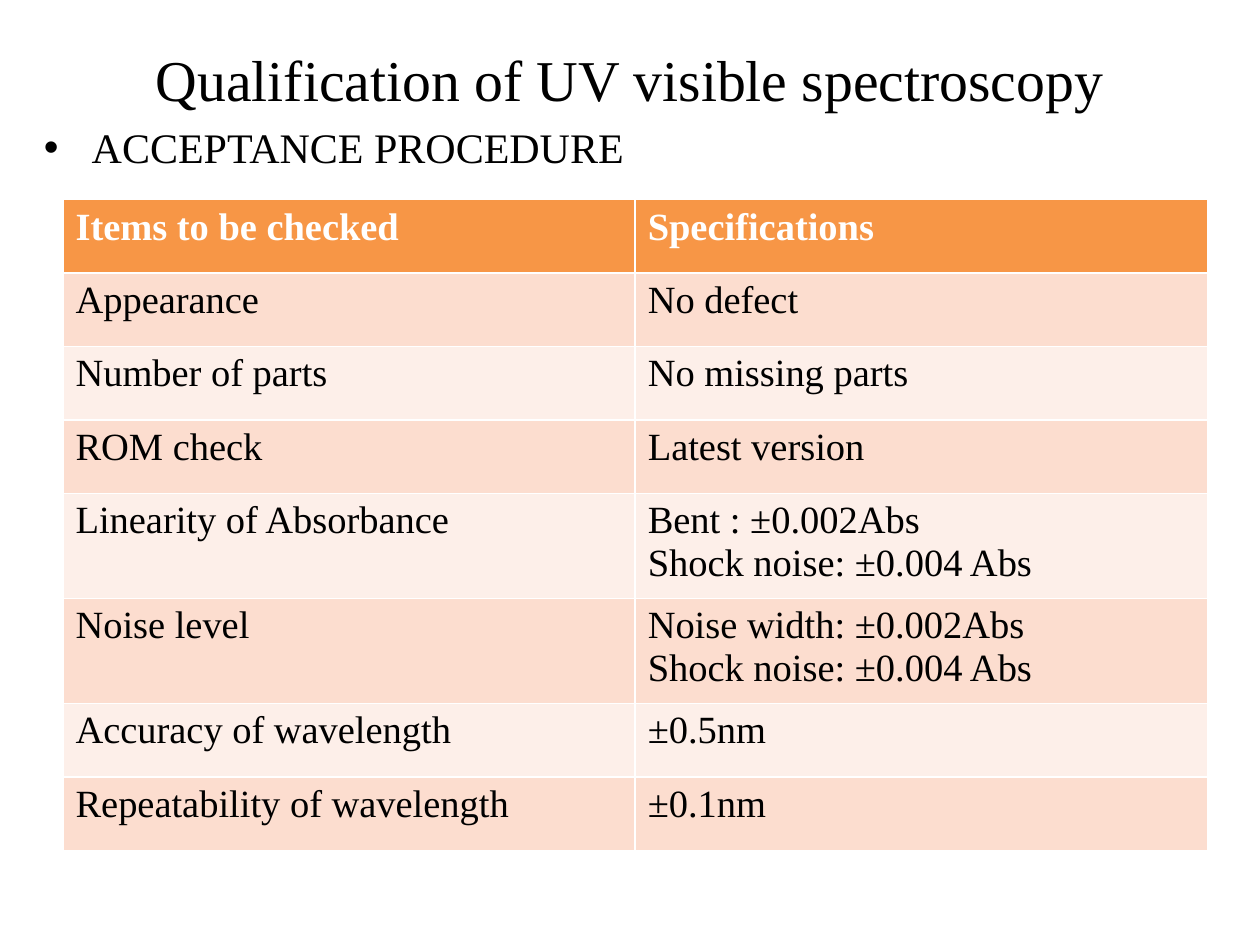
from dataclasses import dataclass

from lxml import etree
from pptx import Presentation
from pptx.dml.color import RGBColor
from pptx.enum.text import MSO_ANCHOR, PP_ALIGN
from pptx.oxml.ns import qn
from pptx.util import Inches, Pt

CENTER, LEFT = PP_ALIGN.CENTER, PP_ALIGN.LEFT
MIDDLE, TOP = MSO_ANCHOR.MIDDLE, MSO_ANCHOR.TOP


@dataclass(frozen=True)
class Theme:
    font: str = "Times New Roman"
    ink: str = "000000"
    header_ink: str = "FFFFFF"
    header_fill: str = "F79646"
    bands: tuple = ("FCDDCF", "FDEFE9")
    title_size: int = 33
    body_size: int = 24
    table_size: int = 22


theme = Theme()

# The page is a grid of 120 columns by 90 rows
UNIT = Inches(10) // 120
ROW_HEIGHT = 7 * UNIT
TABLE_WIDTH = 109 * UNIT


def style(para, size, color=theme.ink, bold=False):
    para.font.name = theme.font
    para.font.size = Pt(size)
    para.font.bold = bold
    para.font.color.rgb = RGBColor.from_string(color)


def add_text(page, grid, text, size, align, anchor):
    box = page.shapes.add_textbox(*(n * UNIT for n in grid))
    frame = box.text_frame
    frame.word_wrap = True
    frame.vertical_anchor = anchor
    para = frame.paragraphs[0]
    para.text = text
    para.alignment = align
    style(para, size)
    return para


deck = Presentation()
deck.slide_width = 120 * UNIT
deck.slide_height = 90 * UNIT
page = deck.slides.add_slide(deck.slide_layouts[6])

# Title
add_text(page, (6, 3, 108, 9), "Qualification of UV visible spectroscopy",
         theme.title_size, CENTER, MIDDLE)

# Bulleted heading with a hanging indent
heading = add_text(page, (3, 11, 113, 74), "ACCEPTANCE PROCEDURE",
                   theme.body_size, LEFT, TOP)
heading.space_before = Pt(0.2 * theme.body_size)
properties = heading._p.get_or_add_pPr()
properties.set("marL", str(Inches(0.38)))
properties.set("indent", str(-Inches(0.38)))
etree.SubElement(properties, qn("a:buFont")).set("typeface", "Arial")
etree.SubElement(properties, qn("a:buChar")).set("char", "•")

# Acceptance table; its default style draws the white rules
rows = [
    ("Items to be checked", "Specifications"),
    ("Appearance", "No defect"),
    ("Number of parts", "No missing parts"),
    ("ROM check", "Latest version"),
    ("Linearity of Absorbance", "Bent : ±0.002Abs\nShock noise: ±0.004 Abs"),
    ("Noise level", "Noise width: ±0.002Abs\nShock noise: ±0.004 Abs"),
    ("Accuracy of wavelength", "±0.5nm"),
    ("Repeatability of wavelength", "±0.1nm"),
]
table = page.shapes.add_table(len(rows), 2, 6 * UNIT, 19 * UNIT,
                              TABLE_WIDTH, len(rows) * ROW_HEIGHT).table
for row, texts in enumerate(rows):
    header = row == 0
    fill = theme.header_fill if header else theme.bands[(row - 1) % 2]
    color = theme.header_ink if header else theme.ink
    for column, text in enumerate(texts):
        cell = table.cell(row, column)
        cell.fill.solid()
        cell.fill.fore_color.rgb = RGBColor.from_string(fill)
        cell.text = text
        for para in cell.text_frame.paragraphs:
            style(para, theme.table_size, color, header)

deck.save("out.pptx")
